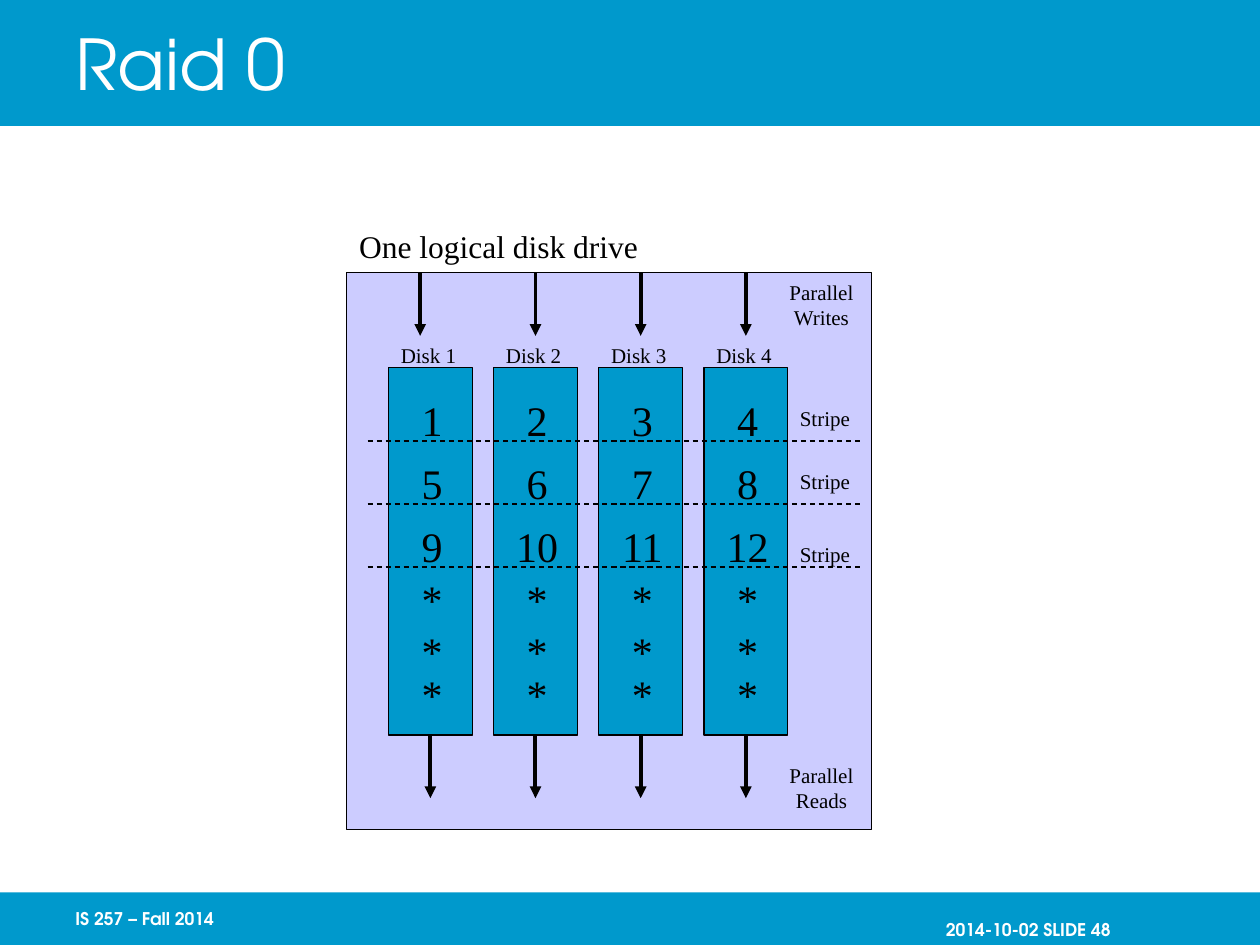
from pptx import Presentation
from pptx.dml.color import RGBColor
from pptx.enum.dml import MSO_LINE
from pptx.enum.shapes import MSO_CONNECTOR, MSO_SHAPE
from pptx.enum.text import MSO_ANCHOR, PP_ALIGN
from pptx.oxml.ns import qn
from pptx.util import Cm, Pt
from lxml.etree import SubElement

COLORS = {"blue": "0099CC", "lilac": "CCCCFF", "black": "000000", "white": "FFFFFF"}
SANS, SERIF = "TeX Gyre Adventor", "Times New Roman"
DISK_LEFT, DISK_TOP, DISK_WIDTH, DISK_HEIGHT, PITCH = 7.83, 7.41, 1.69, 7.41, 2.12
FRAME_LEFT, FRAME_TOP = 6.99, 5.5
ARROW_LENGTH = 1.27
STRIPE_STEP = 1.27


def color(name):
    return RGBColor.from_string(COLORS[name])


def add_text(text, left, top, width, height, size=12, font=SERIF, ink="black",
             bold=False, align=PP_ALIGN.LEFT, anchor=MSO_ANCHOR.TOP, wrap=False,
             margins=(0.25, 0.13, 0.25, 0.13), tabs=()):
    """Add a text box in cm; margins run left, top, right, bottom; tabs are centred."""
    box = page.shapes.add_textbox(Cm(left), Cm(top), Cm(width), Cm(height))
    frame = box.text_frame
    frame.word_wrap, frame.vertical_anchor = wrap, anchor
    (frame.margin_left, frame.margin_top,
     frame.margin_right, frame.margin_bottom) = map(Cm, margins)
    frame.text = text
    for para in frame.paragraphs:
        para.alignment = align
        if tabs:
            tab_list = SubElement(para._p.get_or_add_pPr(), qn("a:tabLst"))
            for stop in tabs:
                SubElement(tab_list, qn("a:tab"), pos=str(Cm(stop)), algn="ctr")
        for span in para.runs:
            span.font.name, span.font.size, span.font.bold = font, Pt(size), bold
            span.font.color.rgb = color(ink)


deck = Presentation()
deck.slide_width, deck.slide_height = Cm(25.4), Cm(19.05)
page = deck.slides.add_slide(deck.slide_layouts[6])

# Bands, enclosing frame and disks
rectangles = [
    (0, 0, 25.4, 2.54, "blue", False),
    (0, 17.99, 25.4, 1.06, "blue", False),
    (FRAME_LEFT, FRAME_TOP, 10.58, 11.22, "lilac", True),
]
rectangles += [(DISK_LEFT + i * PITCH, DISK_TOP, DISK_WIDTH, DISK_HEIGHT, "blue", True)
               for i in range(4)]
shapes = []
for left, top, width, height, fill, outlined in rectangles:
    shape = page.shapes.add_shape(MSO_SHAPE.RECTANGLE, Cm(left), Cm(top),
                                  Cm(width), Cm(height))
    shape.shadow.inherit = False
    shape.fill.solid()
    shape.fill.fore_color.rgb = color(fill)
    if outlined:
        shape.line.color.rgb = color("black")
        shape.line.width = Pt(0.75)
    else:
        shape.line.fill.background()
    shapes.append(shape)
disks = shapes[3:]

# Title and footer
add_text("Raid 0", 1.27, 0, 21.59, 2.54, size=40, font=SANS, ink="white",
         anchor=MSO_ANCHOR.MIDDLE, wrap=True)
footer = dict(size=10, font=SANS, ink="white", bold=True,
              anchor=MSO_ANCHOR.MIDDLE, wrap=True)
add_text("IS 257 – Fall 2014", 1.27, 17.99, 5.28, 1.06,
         margins=(0.25, 0.13, 0, 0.13), **footer)
add_text("2014-10-02 SLIDE 48", 18.84, 17.99, 5.28, 1.06, align=PP_ALIGN.RIGHT,
         margins=(0, 0.56, 1.73, 0.13), **footer)

# Disk captions and block rows
add_text("One logical disk drive", FRAME_LEFT, 4.45, 6.15, 1.02, size=18)
for i in range(4):
    add_text(f"Disk {i + 1}", DISK_LEFT + i * PITCH, 6.77, 1.63, 0.76)

column_tabs = [0.21 + i * PITCH for i in range(1, 4)]
rows = [(7.83, "1\t2\t3\t4"), (9.1, "5\t6\t7\t8"), (10.37, "9\t10\t11\t12")]
rows += [(top, "*\t*\t*\t*") for top in (11.43, 12.49, 13.34)]
for top, blocks in rows:
    add_text(blocks, 8.25, top, 7.5, 1.27, size=24, wrap=True, tabs=column_tabs)

# Side labels
for top in (8.04, 9.31, 10.79):
    add_text("Stripe", 15.87, top, 1.52, 0.76, align=PP_ALIGN.CENTER)
for top, action in ((FRAME_TOP, "Writes"), (15.24, "Reads")):
    add_text(f"Parallel\n{action}", 15.66, top, 1.8, 1.27, align=PP_ALIGN.CENTER)

# Arrows into and out of the disks, then stripe boundaries
disk_bottom = DISK_TOP + DISK_HEIGHT
lines = []
for i, disk in enumerate(disks):
    center = DISK_LEFT + DISK_WIDTH / 2 + i * PITCH
    write_x = center if i else 8.47
    lines.append((write_x, FRAME_TOP, write_x, FRAME_TOP + ARROW_LENGTH, None, True))
    lines.append((center, disk_bottom, center, disk_bottom + ARROW_LENGTH, disk, True))
for i in range(3):
    y = 8.89 + i * STRIPE_STEP
    lines.append((7.41, y, 17.36, y, None, False))

for x1, y1, x2, y2, source, is_arrow in lines:
    connector = page.shapes.add_connector(MSO_CONNECTOR.STRAIGHT,
                                          Cm(x1), Cm(y1), Cm(x2), Cm(y2))
    if source is not None:
        connector.begin_connect(source, 2)
        connector.end_x = connector.begin_x
    connector.line.color.rgb = color("black")
    connector.line.width = Pt(2.25 if is_arrow else 0.75)
    if is_arrow:
        SubElement(connector.line._get_or_add_ln(), qn("a:tailEnd"), type="triangle")
    else:
        connector.line.dash_style = MSO_LINE.DASH
    SubElement(connector._element.spPr, qn("a:effectLst"))

deck.save("out.pptx")
